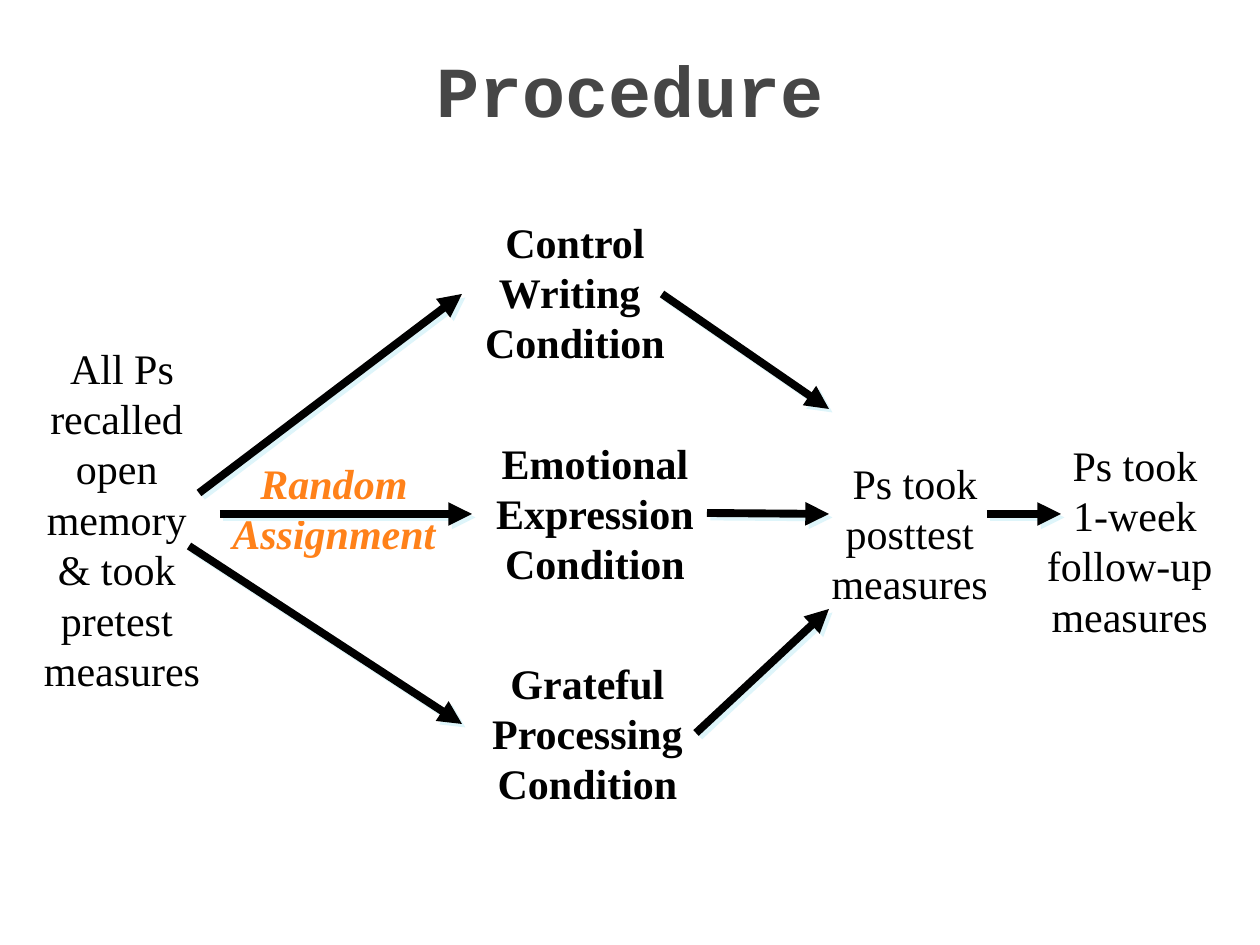
from lxml import etree
from pptx import Presentation
from pptx.dml.color import RGBColor
from pptx.enum.shapes import MSO_CONNECTOR
from pptx.enum.text import MSO_ANCHOR, MSO_AUTO_SIZE, PP_ALIGN
from pptx.oxml.ns import qn
from pptx.util import Emu, Pt

PX_PER_INCH = 126


def px(n):
    return Emu(round(n * 914400 / PX_PER_INCH))


def color(value):
    return RGBColor.from_string(value)


class ProcedureSlide:
    """Holds the slide and the style of its text and arrows."""

    serif = "Times New Roman"
    mono = "Courier New"
    ink = "000000"
    gray = "464646"
    orange = "FF8119"
    glow = "DEF5FA"

    def __init__(self, prs):
        self.s = prs.slides.add_slide(prs.slide_layouts[6])

    def text(self, box, lines, size=24, name=serif, fill=ink, bold=False, italic=False):
        sp = self.s.shapes.add_textbox(*map(px, box))
        tf = sp.text_frame
        tf.text = "\n".join(lines)
        tf.word_wrap = False
        tf.auto_size = MSO_AUTO_SIZE.SHAPE_TO_FIT_TEXT
        for p in tf.paragraphs:
            p.alignment = PP_ALIGN.CENTER
            for r in p.runs:
                r.font.size = Pt(size)
                r.font.name = name
                r.font.bold = bold
                r.font.italic = italic
                r.font.color.rgb = color(fill)
        return sp

    def title(self, box, words):
        sp = self.text(box, [words], 41, self.mono, self.gray, bold=True)
        tf = sp.text_frame
        tf.word_wrap = True
        tf.auto_size = MSO_AUTO_SIZE.NONE
        tf.vertical_anchor = MSO_ANCHOR.MIDDLE

    def arrow(self, start, end, source=None):
        sp = self.s.shapes.add_connector(MSO_CONNECTOR.STRAIGHT, *map(px, start + end))
        if source is not None:
            sp.begin_connect(source, 3)
        sp.line.color.rgb = color(self.ink)
        sp.line.width = Pt(4.5)
        etree.SubElement(sp.line._get_or_add_ln(), qn("a:tailEnd"), type="triangle")
        effects = etree.SubElement(sp._element.spPr, qn("a:effectLst"))
        shadow = etree.SubElement(effects, qn("a:outerShdw"), blurRad="0",
                                  dist=str(Pt(2.8)), dir="2700000", algn="ctr", rotWithShape="0")
        etree.SubElement(shadow, qn("a:srgbClr"), val=self.glow)


def main():
    prs = Presentation()
    prs.slide_width, prs.slide_height = px(1260), px(945)
    slide = ProcedureSlide(prs)

    slide.title((94, 47, 1072, 84), "Procedure")
    slide.text((31, 336, 182, 366), ["All Ps", "recalled ", "open ", "memory ",
                                     "& took ", "pretest ", "measures"])
    slide.text((220, 451, 228, 114), ["Random", "Assignment"],
               fill=slide.orange, bold=True, italic=True)

    conditions = [
        ((472, 210, 206, 164), ["Control", "Writing ", "Condition"]),
        ((483, 431, 224, 164), ["Emotional", "Expression", "Condition"]),
        ((479, 651, 217, 164), ["Grateful", "Processing", "Condition"]),
    ]
    control, emotional, grateful = [slide.text(box, lines, bold=True)
                                    for box, lines in conditions]

    slide.text((819, 451, 192, 164), ["Ps took", "posttest ", "measures "])
    slide.text((1034, 433, 202, 214), ["Ps took", "1-week", "follow-up ", "measures "])

    mid = 514
    for start, end, source in [
        ((199, 493), (462, 294), None),
        ((220, mid), (472, mid), None),
        ((189, 546), (462, 724), None),
        ((662, 294), (829, 409), None),
        ((703, mid), (829, mid), emotional),
        ((693, 735), (829, 609), grateful),
        ((987, mid), (1061, mid), None),
    ]:
        slide.arrow(start, end, source)

    prs.save("out.pptx")


if __name__ == "__main__":
    main()
